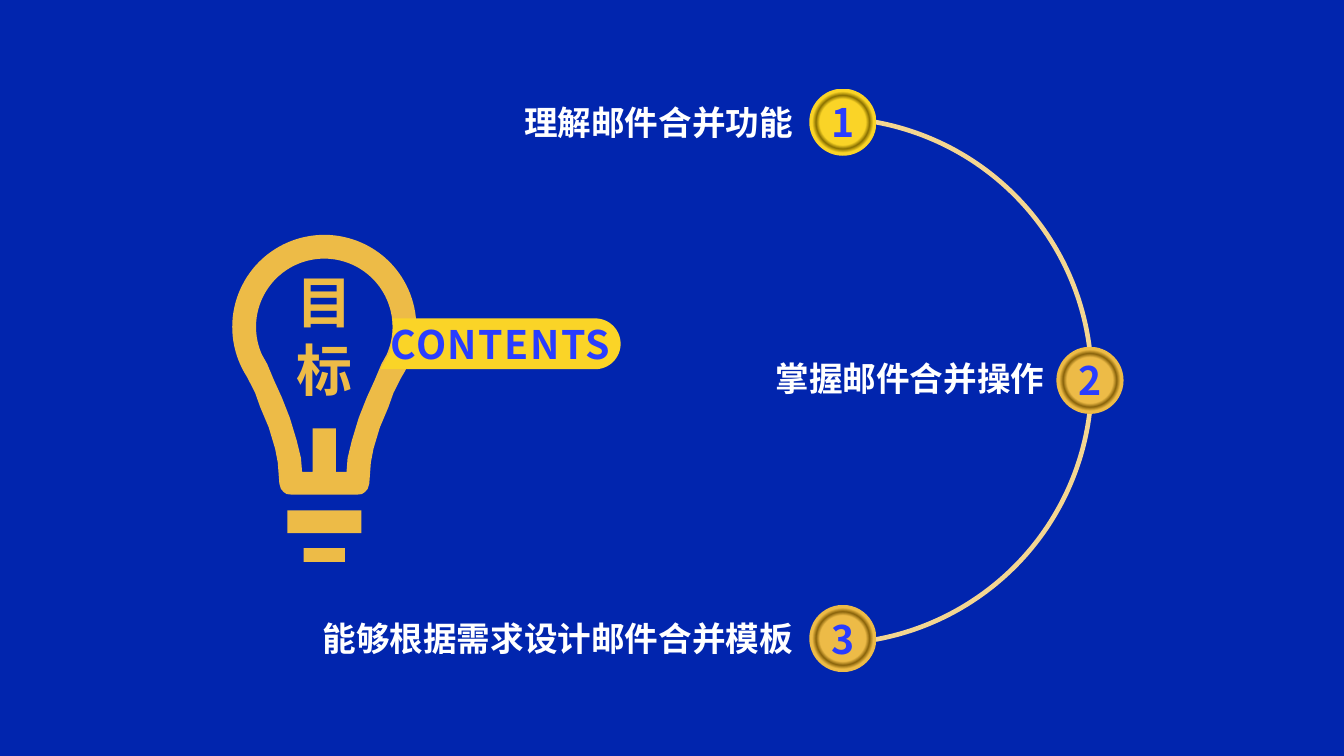
from math import cos, radians, sin

from lxml import etree
from pptx import Presentation
from pptx.dml.color import RGBColor
from pptx.enum.shapes import MSO_SHAPE
from pptx.enum.text import MSO_ANCHOR, PP_ALIGN
from pptx.oxml.ns import qn
from pptx.util import Cm, Pt

MIDDLE = MSO_ANCHOR.MIDDLE
CENTER, RIGHT = PP_ALIGN.CENTER, PP_ALIGN.RIGHT
ARC, OVAL = MSO_SHAPE.ARC, MSO_SHAPE.OVAL

THEME = {
    "font": "Noto Sans CJK SC",
    "background": "0125AE", "gold": "EDBB47", "gold_ring": "8C660E",
    "yellow": "FAD427", "yellow_ring": "8D7403",
    "number": "293DFF", "label": "FFFFFF", "arc": "F4D691",
    "title_size": 30, "number_size": 21, "label_size": 18,
}

TITLE = ["目", "标"]
BANNER = "CONTENTS"
GOALS = [
    {"text": "理解邮件合并功能", "x": 15.93, "tone": "yellow", "width": 7.21, "gap": 0.13, "rise": 0},
    {"text": "掌握邮件合并操作", "x": 20.6, "tone": "gold", "width": 7.21, "gap": 0.05, "rise": 0.05},
    {"text": "能够根据需求设计邮件合并模板", "x": 15.93, "tone": "gold", "width": 9.47, "gap": 0.13, "rise": 0},
]

SLIDE_WIDTH, SLIDE_HEIGHT = 25.4, 14.29
FIRST_GOAL_Y, GOAL_STEP = 2.31, 4.88
NODE_SIZE, LABEL_HEIGHT = 1.27, 3.25
ARC_CENTER, ARC_RADIUS = (15.66, 7.2), 4.97
ARC_ANGLES = (275, 85)
LABEL_INSETS = (0.18, 0.1, 0.18, 0.1)
NO_INSETS = (0, 0, 0, 0)
TITLE_INSETS = (0, 0, 0, 2.39)

BULB_X, BULB_Y = 6.13, 6.18
GLASS_OUTER = {"radius": 1.74, "end": 33, "side": [
    (1.31, 7.42), (1.21, 7.7), (1.05, 8.08), (0.93, 8.48), (0.88, 8.74),
    (0.85, 9.14), (0.82, 9.24), (0.77, 9.3), (0.71, 9.34), (0.62, 9.35)]}
GLASS_INNER = {"radius": 1.29, "end": 24, "side": [
    (1.08, 6.88), (0.95, 7.19), (0.8, 7.52), (0.65, 7.9), (0.52, 8.33),
    (0.44, 8.66), (0.42, 8.92), (0.22, 8.92), (0.22, 8.1)]}
BASE_BARS = [(0.7, 9.65, 10.08), (0.39, 10.36, 10.62)]
BANNER_LEFT = [(7.19, 6.98), (7.36, 6.67), (7.43, 6.35), (7.42, 6.02)]
BANNER_CAP = (11.25, 6.5, 0.48)


def apply(target, values):
    for name, value in values.items():
        setattr(target, name, value)


def color(name):
    return RGBColor.from_string(THEME[name])


def arc_points(x, y, radius, start, end, step=3):
    angles = range(start, end + 1, step)
    return [(x + radius * cos(radians(a)), y + radius * sin(radians(a))) for a in angles]


def glass_outline(radius, end, side):
    dome = arc_points(BULB_X, BULB_Y, radius, 180 - end, 360 + end)
    right = [(BULB_X + dx, y) for dx, y in side]
    left = [(BULB_X - dx, y) for dx, y in reversed(side)]
    return dome + right + left


def bar_outline(half, top, bottom):
    left, right = BULB_X - half, BULB_X + half
    return [(left, top), (right, top), (right, bottom), (left, bottom)]


def add_outline(slide, contours, tone):
    contours = [[(Cm(x), Cm(y)) for x, y in contour] for contour in contours]
    builder = slide.shapes.build_freeform(*contours[0][0])
    for index, contour in enumerate(contours):
        if index:
            builder.move_to(*contour[0])
        builder.add_line_segments(contour[1:], close=True)
    outline = builder.convert_to_shape()
    outline.shadow.inherit = False
    outline.fill.solid()
    outline.fill.fore_color.rgb = color(tone)
    outline.line.fill.background()
    return outline


def write(shape, lines, size, tone, align, insets, spacing=None):
    frame = shape.text_frame
    left, top, right, bottom = map(Cm, insets)
    apply(frame, {"word_wrap": True, "vertical_anchor": MIDDLE, "margin_left": left,
                  "margin_top": top, "margin_right": right, "margin_bottom": bottom})
    for index, line in enumerate(lines):
        paragraph = frame.add_paragraph() if index else frame.paragraphs[0]
        paragraph.alignment = align
        run = paragraph.add_run()
        run.text = line
        apply(run.font, {"name": THEME["font"], "size": Pt(THEME[size]), "bold": True})
        run.font.color.rgb = color(tone)
        properties = run.font._element
        etree.SubElement(properties, qn("a:ea"), typeface=THEME["font"])
        if spacing:
            properties.set("spc", str(spacing))


def fill_ring(shape, tone):
    shape.fill.solid()
    properties = shape._element.spPr
    gradient = etree.Element(qn("a:gradFill"), rotWithShape="1")
    stops = etree.SubElement(gradient, qn("a:gsLst"))
    for position, name in [(48, tone), (56, tone + "_ring"), (64, tone)]:
        stop = etree.SubElement(stops, qn("a:gs"), pos=str(position * 1000))
        etree.SubElement(stop, qn("a:srgbClr"), val=THEME[name])
    center = etree.SubElement(gradient, qn("a:path"), path="circle")
    etree.SubElement(center, qn("a:fillToRect"), {side: "50000" for side in "ltrb"})
    properties.replace(properties.find(qn("a:solidFill")), gradient)


def add_arc(slide):
    x, y = ARC_CENTER
    box = (x - ARC_RADIUS, y - ARC_RADIUS, 2 * ARC_RADIUS, 2 * ARC_RADIUS)
    arc = slide.shapes.add_shape(ARC, *map(Cm, box))
    for index, angle in enumerate(ARC_ANGLES):
        arc.adjustments[index] = angle * 0.6
    arc.shadow.inherit = False
    arc.fill.background()
    arc.line.color.rgb = color("arc")
    arc.line.width = Pt(2.5)


def add_goal(slide, index, goal):
    y = FIRST_GOAL_Y + index * GOAL_STEP
    left = goal["x"] - NODE_SIZE / 2
    node = slide.shapes.add_shape(OVAL, *map(Cm, (left, y - NODE_SIZE / 2, NODE_SIZE, NODE_SIZE)))
    node.shadow.inherit = False
    node.line.fill.background()
    fill_ring(node, goal["tone"])
    write(node, [str(index + 1)], "number_size", "number", CENTER, LABEL_INSETS)
    box = (left - goal["gap"] - goal["width"], y - LABEL_HEIGHT / 2 - goal["rise"],
           goal["width"], LABEL_HEIGHT)
    label = slide.shapes.add_textbox(*map(Cm, box))
    write(label, [goal["text"]], "label_size", "label", RIGHT, LABEL_INSETS)


def main():
    deck = Presentation()
    apply(deck, {"slide_width": Cm(SLIDE_WIDTH), "slide_height": Cm(SLIDE_HEIGHT)})
    slide = deck.slides.add_slide(deck.slide_layouts[6])
    slide.background.fill.solid()
    slide.background.fill.fore_color.rgb = color("background")

    add_arc(slide)
    for index, goal in enumerate(GOALS):
        add_goal(slide, index, goal)

    contours = [glass_outline(**GLASS_OUTER), glass_outline(**GLASS_INNER)]
    contours += [bar_outline(*bar) for bar in BASE_BARS]
    bulb = add_outline(slide, contours, "gold")
    write(bulb, TITLE, "title_size", "gold", CENTER, TITLE_INSETS)

    banner = add_outline(slide, [BANNER_LEFT + arc_points(*BANNER_CAP, -90, 90)], "yellow")
    write(banner, [BANNER], "number_size", "number", CENTER, NO_INSETS, spacing=80)
    deck.save("out.pptx")


if __name__ == "__main__":
    main()
